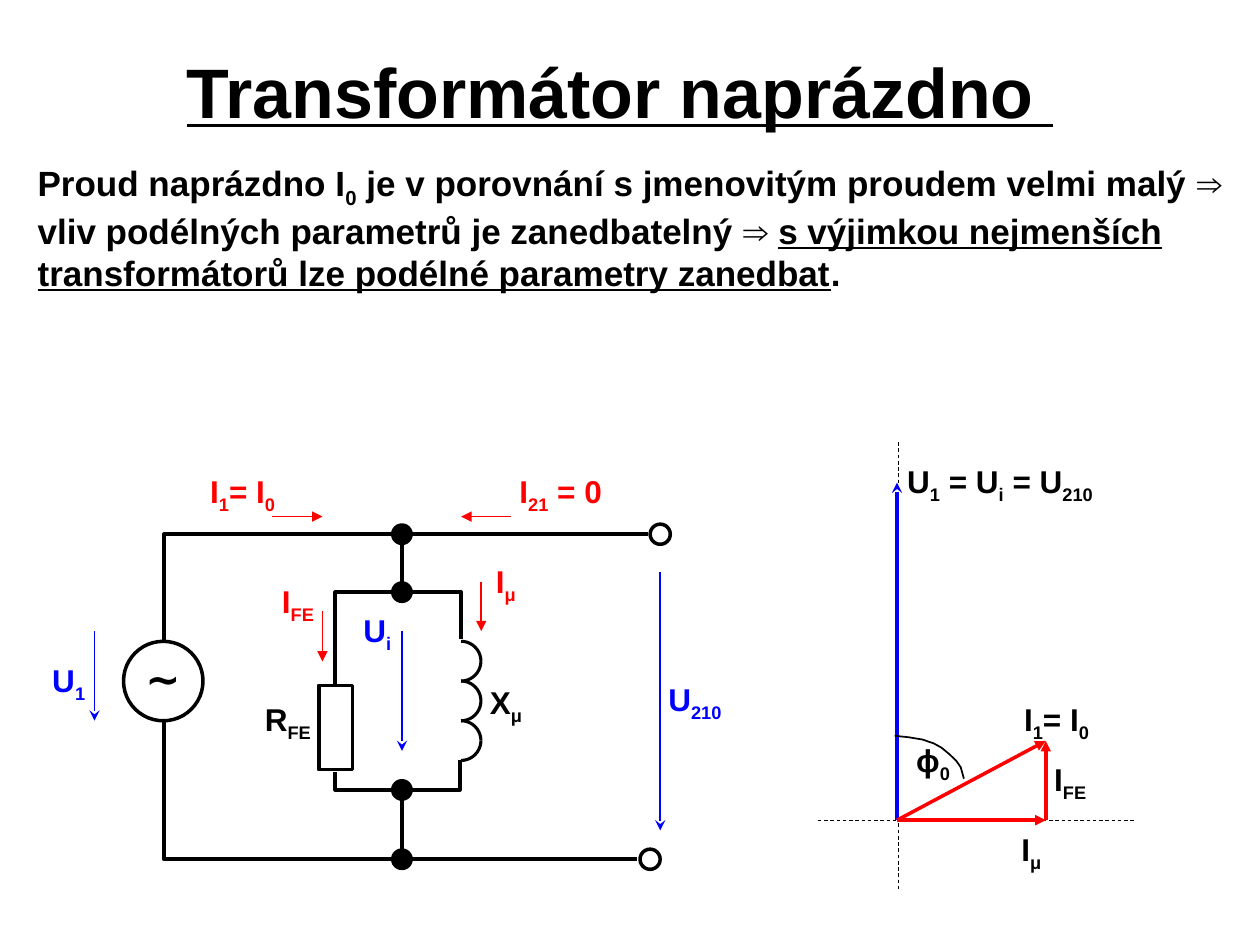
from math import cos, pi, sin

from pptx import Presentation
from pptx.dml.color import RGBColor
from pptx.enum import dml, shapes, text
from pptx.oxml import parse_xml
from pptx.oxml.ns import nsdecls, qn
from pptx.util import Pt

COLORS = {"black": "000000", "blue": "0000FF", "red": "FF0000"}
FONT = "Arial"

# Shared positions of the circuit, in points
NODE_X, NODE_SIZE = 229.7, 11.5
NODE_LEFT, NODE_RIGHT = 223.9, 235.4
TOP, UPPER, LOWER, BOTTOM = 305.3, 338.4, 451.4, 491
SOURCE_X, RESISTOR_X, COIL_X = 93.6, 191.5, 263.5

# Shared positions of the phasor diagram
ORIGIN_X, ORIGIN_Y, TIP_X, TIP_Y = 512.6, 468.7, 597.6, 423.4


def rgb(color):
    return RGBColor.from_string(COLORS[color])


def style_line(shape, color, width):
    shape.line.color.rgb = rgb(color)
    shape.line.width = Pt(width)


def add_text(slide, content, x, y, w, h=21.6, size=18, color="black", align="CENTER",
             anchor="TOP", margins=(0, 0), grow=True, underline=False):
    """Write bold text; |...| is underlined and _..._ is subscript."""
    box = slide.shapes.add_textbox(Pt(x), Pt(y), Pt(w), Pt(h))
    frame = box.text_frame
    frame.word_wrap = True
    frame.auto_size = getattr(text.MSO_AUTO_SIZE, "SHAPE_TO_FIT_TEXT" if grow else "NONE")
    frame.vertical_anchor = getattr(text.MSO_ANCHOR, anchor)
    frame.margin_left = frame.margin_right = Pt(margins[0])
    frame.margin_top = frame.margin_bottom = Pt(margins[1])
    paragraph = frame.paragraphs[0]
    paragraph.alignment = getattr(text.PP_ALIGN, align)
    for i, part in enumerate(content.split("|")):
        for j, piece in enumerate(part.split("_")):
            if not piece:
                continue
            run = paragraph.add_run()
            run.text = piece
            font = run.font
            font.name, font.size, font.bold = FONT, Pt(size), True
            font.underline = underline or i % 2 == 1
            font.color.rgb = rgb(color)
            if j % 2:
                font._element.set("baseline", "-25000")


def add_line(slide, x1, y1, x2, y2, color="black", width=2, head=None, dashed=False,
             elbow=False):
    """Draw a line; an elbow leaves its start horizontally and turns once."""
    kind = shapes.MSO_CONNECTOR.ELBOW if elbow else shapes.MSO_CONNECTOR.STRAIGHT
    line = slide.shapes.add_connector(kind, Pt(x1), Pt(y1), Pt(x2), Pt(y2))
    style_line(line, color, width)
    properties = line._element.spPr
    if elbow:
        properties.find(qn("a:prstGeom")).set("prst", "bentConnector2")
    if dashed:
        line.line.dash_style = dml.MSO_LINE.DASH
    if head:
        line.line._get_or_add_ln().append(
            parse_xml(f'<a:tailEnd {nsdecls("a")} type="{head}"/>'))
    properties.append(parse_xml(f'<a:effectLst {nsdecls("a")}/>'))


def add_outline(slide, kind, x, y, w, h, width=2, filled=False):
    shape = slide.shapes.add_shape(getattr(shapes.MSO_SHAPE, kind), Pt(x), Pt(y), Pt(w), Pt(h))
    shape.shadow.inherit = False
    if filled:
        shape.fill.solid()
        shape.fill.fore_color.rgb = rgb("black")
    else:
        shape.fill.background()
    style_line(shape, "black", width)


def add_dot(slide, x, y, **style):
    add_outline(slide, "OVAL", x - NODE_SIZE / 2, y - NODE_SIZE / 2, NODE_SIZE, NODE_SIZE, **style)


def add_curve(slide, points, width):
    start, *rest = [(Pt(x), Pt(y)) for x, y in points]
    builder = slide.shapes.build_freeform(*start)
    builder.add_line_segments(rest, close=False)
    curve = builder.convert_to_shape()
    curve.shadow.inherit = False
    curve.fill.background()
    style_line(curve, "black", width)


def add_coil(slide, x, top, radius, turns):
    steps = 10
    for turn in range(turns):
        center = top + radius * (2 * turn + 1)
        for start in (-pi / 2, 0):
            angles = [start + pi / 2 * i / steps for i in range(steps + 1)]
            add_curve(slide, [(x + radius * cos(a), center + radius * sin(a)) for a in angles], 1.75)


def draw_circuit(slide):
    # Wires
    for wire in [
        (NODE_X, 311, NODE_X, 332.6),
        (NODE_X, 457.2, NODE_X, 485.3),
        (NODE_RIGHT, TOP, 370.1, TOP),
        (NODE_RIGHT, BOTTOM, 364.3, BOTTOM),
    ]:
        add_line(slide, *wire)
    for wire in [
        (NODE_LEFT, TOP, SOURCE_X, 365.8),
        (NODE_LEFT, BOTTOM, SOURCE_X, 412.6),
        (NODE_LEFT, UPPER, RESISTOR_X, 391),
        (NODE_LEFT, LOWER, RESISTOR_X, 441.4),
        (NODE_RIGHT, UPPER, COIL_X, 365),
        (NODE_RIGHT, LOWER, 262.8, 434.2),
    ]:
        add_line(slide, *wire, elbow=True)

    # Source, resistor, coil, nodes and terminals
    add_outline(slide, "OVAL", 70.6, 366.5, 45.4, 45.4)
    add_text(slide, "∼", 76.3, 373, 33.8, 28.8, size=24, anchor="MIDDLE")
    add_outline(slide, "RECTANGLE", 182.2, 391.7, 19.4, 48.2)
    add_coil(slide, COIL_X, 366.5, 11.35, 3)
    for y in (TOP, UPPER, LOWER, BOTTOM):
        add_dot(slide, NODE_X, y, width=1, filled=True)
    add_dot(slide, 377.3, TOP)
    add_dot(slide, 371.5, BOTTOM)

    # Voltage and current arrows
    for arrow in [
        (54, 360.7, 54, 411.8),
        (NODE_X, 360.7, NODE_X, 429.1),
        (377.3, 326.9, 377.3, 474.5),
    ]:
        add_line(slide, *arrow, color="blue", width=1, head="stealth")
    for arrow in [
        (155.5, 295.2, 184.3, 295.2),
        (292.3, 295.2, 263.5, 295.2),
        (184.3, 349.2, 184.3, 378),
        (275, 332.6, 275, 360.7),
    ]:
        add_line(slide, *arrow, color="red", width=1, head="triangle")

    # Labels
    for label, x, y, w, color in [
        ("U_1_", 25.2, 378, 28.1, "blue"),
        ("U_i_", 201.6, 349.2, 28.1, "blue"),
        ("U_210_", 377.3, 388.8, 39.6, "blue"),
        ("I_1_= I_0_", 110.2, 270, 56.9, "red"),
        ("I_21_ = 0", 280.8, 270, 79.2, "red"),
        ("I_FE_", 150.5, 332.6, 39.6, "red"),
        ("I_μ_", 269.3, 321.1, 39.6, "red"),
        ("R_FE_", 144.7, 400.3, 39.6, "black"),
        ("X_μ_", 269.3, 390.2, 39.6, "black"),
    ]:
        add_text(slide, label, x, y, w, color=color)


def draw_phasors(slide):
    # Axes
    add_line(slide, 467.3, ORIGIN_Y, 649.4, ORIGIN_Y, width=0.5, dashed=True)
    add_line(slide, 513.4, 252.7, 513.4, 508.3, width=0.5, dashed=True)

    # Phasors
    add_line(slide, ORIGIN_X, ORIGIN_Y, ORIGIN_X, 275.8, color="blue", head="stealth")
    for phasor in [
        (ORIGIN_X, ORIGIN_Y, TIP_X, ORIGIN_Y),
        (TIP_X, ORIGIN_Y, TIP_X, TIP_Y),
        (ORIGIN_X, ORIGIN_Y, TIP_X, TIP_Y),
    ]:
        add_line(slide, *phasor, color="red", head="triangle")

    # Phase angle
    add_curve(slide, [(511.2, 420.5), (519, 421.3), (527, 422.6), (533.5, 424.8), (538, 427.3),
                      (542.5, 431), (546.5, 434.9), (549, 438.5), (550, 442), (550.8, 445)], 1)

    # Labels
    add_text(slide, "U_1_ = U_i_ = U_210_", 518.4, 264.2, 136.8, align="LEFT")
    for label, x, y, w in [
        ("I_1_= I_0_", 575.3, 400.3, 56.9),
        ("I_FE_", 591.8, 434.2, 39.6),
        ("I_μ_", 569.5, 474.5, 39.6),
        ("ϕ_0_", 513.4, 423.4, 39.6),
    ]:
        add_text(slide, label, x, y, w)


def main():
    deck = Presentation()
    deck.slide_width, deck.slide_height = Pt(720), Pt(540)
    slide = deck.slides.add_slide(deck.slide_layouts[6])

    # Title and statement
    add_text(slide, "Transformátor naprázdno ", 87.8, 20.2, 532.8, 62.6, size=40,
             anchor="MIDDLE", margins=(7.2, 3.6), grow=False, underline=True)
    add_text(slide, "Proud naprázdno I_0_ je v porovnání s jmenovitým proudem velmi malý ⇒ "
             "vliv podélných parametrů je zanedbatelný ⇒ |s výjimkou nejmenších "
             "transformátorů lze podélné parametry zanedbat|.",
             14.4, 88.6, 691.9, 79.2, size=20, align="LEFT", margins=(7.2, 3.6))

    draw_circuit(slide)
    draw_phasors(slide)
    deck.save("out.pptx")


if __name__ == "__main__":
    main()
